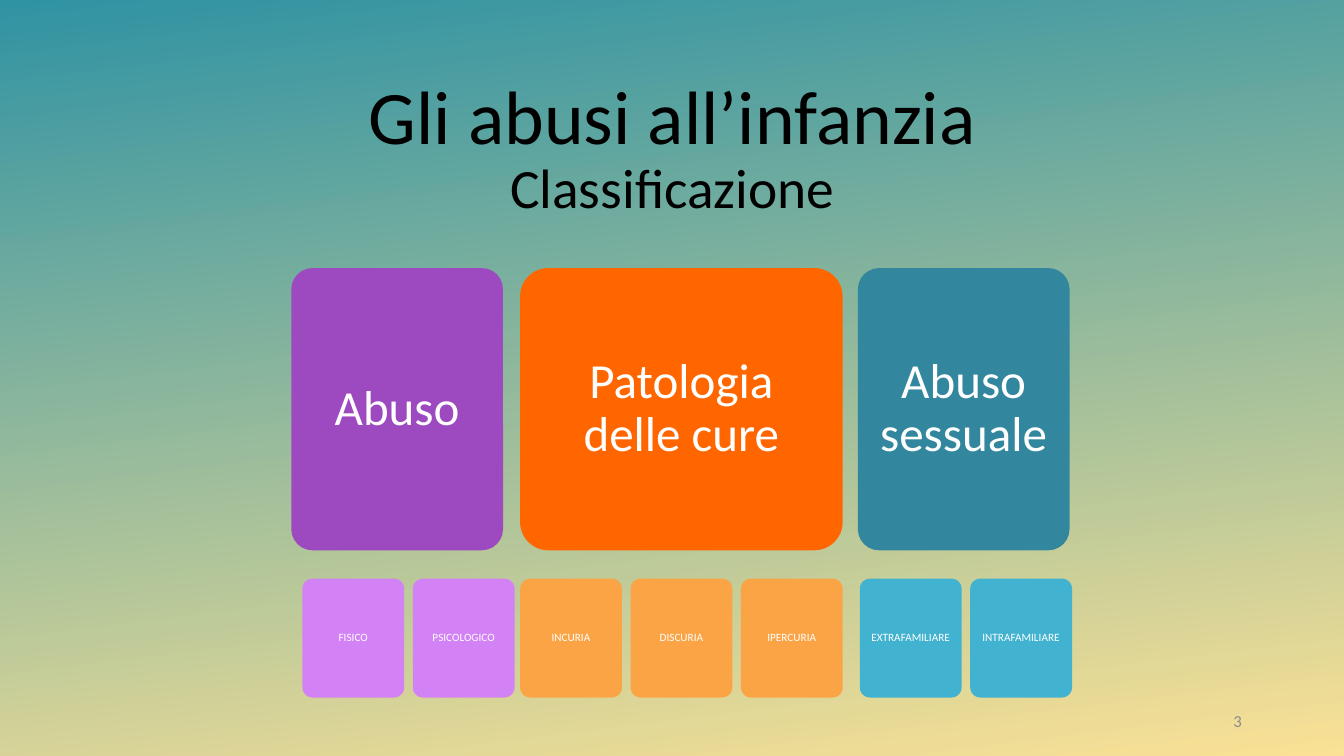
from pptx import Presentation
from pptx.dml.color import RGBColor
from pptx.enum.shapes import MSO_SHAPE
from pptx.enum.text import MSO_ANCHOR, MSO_AUTO_SIZE, PP_ALIGN
from pptx.util import Inches, Pt

ROUNDED = MSO_SHAPE.ROUNDED_RECTANGLE
MIDDLE = MSO_ANCHOR.MIDDLE
CENTER, RIGHT = PP_ALIGN.CENTER, PP_ALIGN.RIGHT
NO_FIT = MSO_AUTO_SIZE.NONE
TITLE_ONLY = 5

COLORS = {
    "black": "000000", "white": "FFFFFF", "gray": "8C8C8C",
    "sand": "FAE195", "sea": "3093A3",
    "purple": "9D49C0", "lilac": "D282F4",
    "orange": "FF6600", "apricot": "FBA446",
    "teal": "32879E", "sky": "41B2D0",
}


class SlideBuilder:
    """Style and current slide; lengths are columns and rows of a grid."""

    FONT = "Calibri"
    COLUMNS, ROWS = 133.33, 75

    def __init__(self, presentation):
        self.column = presentation.slide_width / self.COLUMNS
        self.row = presentation.slide_height / self.ROWS
        layout = presentation.slide_layouts[TITLE_ONLY]
        self.slide = presentation.slides.add_slide(layout)

    def color(self, name):
        return RGBColor.from_string(COLORS[name])

    def place(self, left, top, width, height):
        return (round(left * self.column), round(top * self.row),
                round(width * self.column), round(height * self.row))

    def apply(self, target, formats):
        for name, value in formats.items():
            setattr(target, name, value)

    def set_text(self, shape, runs, color, align=CENTER, inset=None, spacing=None):
        frame = shape.text_frame
        formats = {"word_wrap": True, "auto_size": NO_FIT, "vertical_anchor": MIDDLE}
        if inset is not None:
            for side in ("left", "top", "right", "bottom"):
                formats[f"margin_{side}"] = Inches(inset)
        self.apply(frame, formats)
        paragraph = frame.paragraphs[0]
        self.apply(paragraph, {"alignment": align, "line_spacing": spacing})
        for text, size in runs:
            run = paragraph.add_run()
            run.text = text
            self.apply(run.font, {"name": self.FONT, "size": Pt(size)})
            run.font.color.rgb = self.color(color)

    def background(self, start, end, angle):
        fill = self.slide.background.fill
        fill.gradient()
        fill.gradient_angle = angle
        for stop, name in zip(fill.gradient_stops, (start, end)):
            stop.color.rgb = self.color(name)

    def title(self, box, runs):
        title = self.slide.shapes.title
        self.apply(title, dict(zip(("left", "top", "width", "height"), self.place(*box))))
        self.set_text(title, runs, "black", spacing=0.9)

    def card(self, box, text, size, fill, inset):
        card = self.slide.shapes.add_shape(ROUNDED, *self.place(*box))
        card.adjustments[0] = 0.1
        card.shadow.inherit = False
        card.fill.solid()
        card.fill.fore_color.rgb = self.color(fill)
        card.line.fill.background()
        self.set_text(card, [(text, size)], "white", inset=inset, spacing=0.9)

    def label(self, box, text, size, color, align):
        label = self.slide.shapes.add_textbox(*self.place(*box))
        self.set_text(label, [(text, size)], color, align)


# Category, left, width, fill, then subtypes, their left edge and fill
CATEGORIES = [
    ("Abuso", 28.9, 21, "purple", ["FISICO", "PSICOLOGICO"], 30, "lilac"),
    ("Patologia delle cure", 51.6, 32, "orange",
     ["INCURIA", "DISCURIA", "IPERCURIA"], 51.6, "apricot"),
    ("Abuso sessuale", 85.1, 21, "teal",
     ["EXTRAFAMILIARE", "INTRAFAMILIARE"], 85.3, "sky"),
]
SUBTYPE_PITCH = 10.95


def main():
    presentation = Presentation()
    presentation.slide_width = Inches(13.33)
    presentation.slide_height = Inches(7.5)
    builder = SlideBuilder(presentation)

    # Background and title
    builder.background("sand", "sea", angle=97)
    builder.title((21.7, 8.6, 90, 12.5),
                  [("Gli abusi all’infanzia ", 54), ("Classificazione", 39.6)])

    # Categories with their subtypes below
    for name, left, width, fill, subtypes, first, subtype_fill in CATEGORIES:
        builder.card((left, 26.6, width, 28), name, 35, fill, inset=0.15)
        for index, subtype in enumerate(subtypes):
            box = (first + index * SUBTYPE_PITCH, 57.4, 10.1, 11.8)
            builder.card(box, subtype, 8, subtype_fill, inset=0.03)

    # Slide number
    builder.label((94.2, 69.5, 30, 4), "3", 12, "gray", RIGHT)

    presentation.save("out.pptx")


if __name__ == "__main__":
    main()
